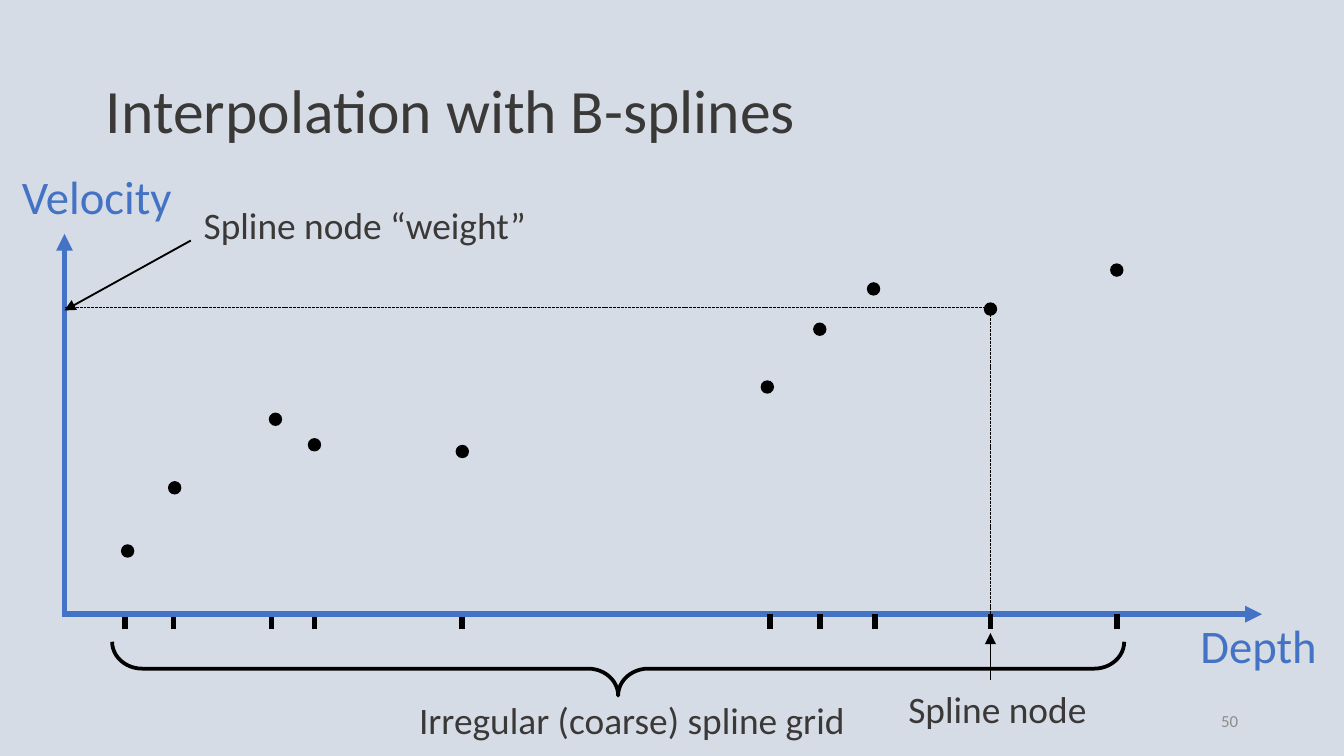
from collections import namedtuple

from lxml import etree
from pptx import Presentation
from pptx.dml.color import RGBColor
from pptx.enum.dml import MSO_LINE
from pptx.enum.shapes import MSO_CONNECTOR, MSO_SHAPE
from pptx.enum.text import MSO_ANCHOR, PP_ALIGN
from pptx.oxml.ns import qn
from pptx.util import Inches, Pt

STRAIGHT = MSO_CONNECTOR.STRAIGHT
OVAL, BRACE = MSO_SHAPE.OVAL, MSO_SHAPE.LEFT_BRACE
SYSTEM_DASH = MSO_LINE.SQUARE_DOT
TOP, MIDDLE = MSO_ANCHOR.TOP, MSO_ANCHOR.MIDDLE
LEFT, CENTER, RIGHT = PP_ALIGN.LEFT, PP_ALIGN.CENTER, PP_ALIGN.RIGHT

COLORS = {"background": "D6DCE5", "text": "3B3838", "axis": "4472C4",
          "ink": "000000", "number": "8C8C8C"}
FONT = "Calibri"

# A 16:9 slide on a grid of 100 columns by 56.25 rows
# Boxes are left, top, width, height
WIDTH = Inches(10)
HEIGHT = WIDTH * 9 // 16
COLUMN, ROW = WIDTH / 100, HEIGHT / 56.25
Box = namedtuple("Box", "left top width height")

# Each node: tick column, dot column, dot rows above the depth axis
LEFT_NODES = [(4.5, 4.7, 4.7), (8.1, 8.2, 9.4), (15.4, 15.7, 14.5),
              (18.6, 18.6, 12.6), (29.6, 29.6, 12.1)]
RIGHT_NODES = [(52.5, 52.3, 16.9), (56.2, 56.2, 21.2), (60.3, 60.2, 24.2),
               (68.9, 68.9, 22.7), (78.3, 78.3, 25.6)]
MARKED_NODE = RIGHT_NODES[3]
DOT_SIZE, TICK_LENGTH = 1, 1.1


def color(name):
    return RGBColor.from_string(COLORS[name])


def place(box):
    return (round(box.left * COLUMN), round(box.top * ROW),
            round(box.width * COLUMN), round(box.height * ROW))


def add_text(slide, box, text, size, color_name="text", align=LEFT,
             anchor=TOP, wrap=True, spacing=1.0):
    shape = slide.shapes.add_textbox(*place(box))
    frame = shape.text_frame
    frame.word_wrap = wrap
    frame.vertical_anchor = anchor
    paragraph = frame.paragraphs[0]
    paragraph.text = text
    paragraph.alignment = align
    paragraph.line_spacing = spacing
    paragraph.font.color.rgb = color(color_name)
    font_format = {"name": FONT, "size": Pt(size)}
    for name, value in font_format.items():
        setattr(paragraph.font, name, value)


def add_line(slide, start, end, width, color_name="ink", arrow=False, dash=None):
    (x1, y1), (x2, y2) = start, end
    connector = slide.shapes.add_connector(
        STRAIGHT, round(x1 * COLUMN), round(y1 * ROW),
        round(x2 * COLUMN), round(y2 * ROW))
    connector.line.color.rgb = color(color_name)
    line_format = {"width": Pt(width), "dash_style": dash}
    for name, value in line_format.items():
        setattr(connector.line, name, value)
    if arrow:
        line = connector.line._get_or_add_ln()
        etree.SubElement(line, qn("a:tailEnd"), type="triangle")
    etree.SubElement(connector._element.spPr, qn("a:effectLst"))


def add_nodes(slide, left, base, nodes):
    for tick, column, height in nodes:
        box = Box(left + column - DOT_SIZE / 2, base - height - DOT_SIZE / 2,
                  DOT_SIZE, DOT_SIZE)
        dot = slide.shapes.add_shape(OVAL, *place(box))
        dot.shadow.inherit = False
        dot.fill.solid()
        dot.fill.fore_color.rgb = color("ink")
        dot.line.fill.background()
        add_line(slide, (left + tick, base),
                 (left + tick, base + TICK_LENGTH), 3)


def add_header(slide, box):
    add_text(slide, box, "Interpolation with B-splines", 33,
             anchor=MIDDLE, spacing=0.9)


def add_page_number(slide, box):
    add_text(slide, box, "50", 9, "number", RIGHT, MIDDLE)


def add_plot(slide, box):
    left, base = box.left, box.top + box.height

    # Axes, with the nodes and their ticks
    add_line(slide, (left, base + 0.2), (left, box.top), 3, "axis", arrow=True)
    add_nodes(slide, left, base, LEFT_NODES)
    add_line(slide, (left, base), (left + box.width, base), 3, "axis", arrow=True)
    add_nodes(slide, left, base, RIGHT_NODES)

    # Axis names
    add_text(slide, Box(left - 6.75, box.top - 5.4, 18.3, 5.2),
             "Velocity", 25, "axis", CENTER)
    add_text(slide, Box(left + box.width - 9.4, base - 0.3, 18.3, 5.2),
             "Depth", 25, "axis", CENTER)

    # Dashed guides from the marked node to both axes
    node_x, weight_y = left + MARKED_NODE[0], base - MARKED_NODE[2] - 0.1
    add_line(slide, (left, weight_y), (node_x, weight_y), 0.5, dash=SYSTEM_DASH)
    add_line(slide, (node_x, base), (node_x, weight_y + 0.2), 0.5,
             dash=SYSTEM_DASH)

    # Callouts for the marked node
    add_line(slide, (left + 9.4, box.top + 0.5), (left, weight_y + 0.2), 1,
             arrow=True)
    add_text(slide, Box(left + 4.15, box.top - 2.85, 36.4, 4.4),
             "Spline node “weight”", 20, align=CENTER)
    add_line(slide, (node_x, base + 4.9), (node_x, base + 1.4), 1, arrow=True)
    add_text(slide, Box(node_x - 7.1, base + 4.9, 15.4, 4.4),
             "Spline node", 20, wrap=False)


def add_grid_brace(slide, box):
    # The brace is upright before it is turned, so its sides swap
    middle_x, middle_y = box.left + box.width / 2, box.top + box.height / 2
    upright = Box(middle_x - box.height / 2, middle_y - box.width / 2,
                  box.height, box.width)
    brace = slide.shapes.add_shape(BRACE, *place(upright))
    brace.rotation = 270
    brace.adjustments[0] = 0.56
    brace.adjustments[1] = 0.5
    brace.shadow.inherit = False
    brace.fill.background()
    brace.line.color.rgb = color("ink")
    brace.line.width = Pt(2)
    add_text(slide, Box(middle_x - 15.8, box.top + 3.65, 34, 4.4),
             "Irregular (coarse) spline grid", 20, wrap=False)


def main():
    presentation = Presentation()
    presentation.slide_width, presentation.slide_height = WIDTH, HEIGHT
    slide = presentation.slides.add_slide(presentation.slide_layouts[6])
    slide.background.fill.solid()
    slide.background.fill.fore_color.rgb = color("background")

    add_header(slide, Box(6.9, 3, 86.2, 10.9))
    add_plot(slide, Box(4.8, 17.4, 89.1, 28.3))
    add_grid_brace(slide, Box(8.35, 47.75, 75.3, 4))
    add_page_number(slide, Box(70.6, 52.1, 22.5, 3))
    presentation.save("out.pptx")


if __name__ == "__main__":
    main()
